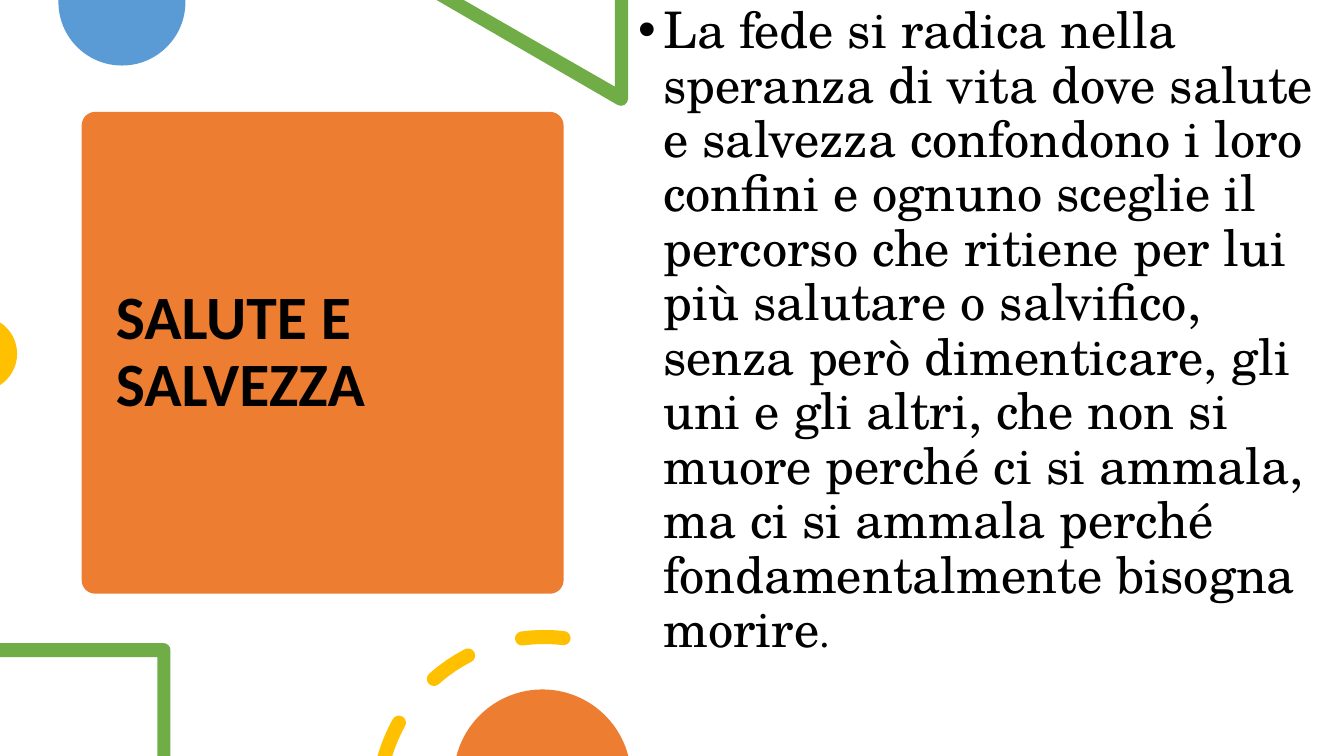
from math import ceil, cos, radians, sin, tan

from lxml.etree import SubElement
from pptx import Presentation
from pptx.dml.color import RGBColor
from pptx.enum.shapes import MSO_SHAPE as Preset
from pptx.enum.text import MSO_ANCHOR as Anchor, MSO_AUTO_SIZE as AutoSize, PP_ALIGN as Align
from pptx.oxml.ns import qn
from pptx.util import Inches, Pt

# Content: each run is text, size, font, bold
TITLE = [("SALUTE E SALVEZZA", 44, "Calibri", True)]
BODY = [
    ("La fede si radica nella speranza di vita dove salute e salvezza confondono "
     "i loro confini e ognuno sceglie il percorso che ritiene per lui più salutare "
     "o salvifico, senza però dimenticare, gli uni e gli altri, che non si muore "
     "perché ci si ammala, ma ci si ammala perché fondamentalmente bisogna morire",
     36, "TeX Gyre Schola", False),
    (".", 28, "TeX Gyre Schola", False),
]
WIDTH, HEIGHT = 13.33, 7.5
BLACK, BLUE, GREEN = "000000", "5B9BD5", "70AD47"
YELLOW, ORANGE = "FFC000", "ED7D31"

# Dashed ring: centre, radius, half thickness, start and end angle of each dash
RING_X, RING_Y, RING_RADIUS, RING_HALF = 5.4, 7.97, 1.65, 0.07
ROUND_DASHES = [(228.4, 242.7), (262.3, 276.6)]
CUT_DASH_OUTER, CUT_DASH_INNER, CUT_DASH_END = 195.9, 197.3, 209


# An outline is a list of nodes: a node holds its end point last,
# after two control points if it is reached by a curve.
def corners(*points):
    return [(point,) for point in points]


def arc(x, y, radius, start, end):
    """Nodes on a circle; angles in degrees, clockwise from the right."""
    count = ceil(abs(end - start) / 90) or 1
    step = radians(end - start) / count
    reach = radius * tan(step / 4) * 4 / 3
    nodes = corners((x + radius * cos(radians(start)), y + radius * sin(radians(start))))
    for number in range(count):
        first = radians(start) + number * step
        last = first + step
        left, top = nodes[-1][-1]
        right, bottom = x + radius * cos(last), y + radius * sin(last)
        nodes.append(((left - reach * sin(first), top + reach * cos(first)),
                      (right + reach * sin(last), bottom - reach * cos(last)),
                      (right, bottom)))
    return nodes


def ring_arc(offset, start, end):
    return arc(RING_X, RING_Y, RING_RADIUS + offset, start, end)


def dash_cap(angle, turn):
    x, y = ring_arc(0, angle, angle)[0][-1]
    return arc(x, y, RING_HALF, angle + turn, angle + turn + 180)[1:]


def dash(outer_start, inner_start, end):
    return (ring_arc(RING_HALF, outer_start, end) + dash_cap(end, 0)
            + ring_arc(-RING_HALF, end, inner_start)[1:])


def color(value):
    return RGBColor.from_string(value)


def paint(shape, value):
    shape.shadow.inherit = False
    shape.fill.solid()
    shape.fill.fore_color.rgb = color(value)
    shape.line.fill.background()


def draw_outline(page, value, *contours):
    def emu(point):
        return Inches(point[0]), Inches(point[1])

    builder = page.shapes.build_freeform(*emu(contours[0][0][-1]))
    for number, nodes in enumerate(contours):
        if number:
            builder.move_to(*emu(nodes[0][-1]))
        builder.add_line_segments([emu(node[-1]) for node in nodes[1:]], close=True)
    shape = builder.convert_to_shape()
    paint(shape, value)

    # Turn the segments that have control points into curves
    segments = list(shape._element.iter(qn("a:lnTo")))
    nodes = [node for contour in contours for node in contour[1:]]
    for segment, node in zip(segments, nodes):
        if len(node) == 3:
            curve = segment.getparent().makeelement(qn("a:cubicBezTo"))
            for x, y in map(emu, node):
                point = SubElement(curve, qn("a:pt"))
                point.set("x", str(x - shape.left))
                point.set("y", str(y - shape.top))
            segment.getparent().replace(segment, curve)


def fill_placeholder(box, place, runs, anchor):
    box.left, box.top, box.width, box.height = map(Inches, place)
    frame = box.text_frame
    frame.word_wrap = True
    frame.auto_size = AutoSize.NONE
    frame.vertical_anchor = anchor
    para = frame.paragraphs[0]
    para.alignment = Align.LEFT
    para.line_spacing = 0.9
    for text, size, font, bold in runs:
        span = para.add_run()
        span.text = text
        span.font.size, span.font.name, span.font.bold = Pt(size), font, bold
        span.font.color.rgb = color(BLACK)
    return para


def main():
    deck = Presentation()
    deck.slide_width, deck.slide_height = Inches(WIDTH), Inches(HEIGHT)
    page = deck.slides.add_slide(deck.slide_layouts[1])
    title, body = page.shapes.title, page.placeholders[1]

    # Title on its orange panel, which goes behind it
    panel = page.shapes.add_shape(Preset.ROUNDED_RECTANGLE, *map(Inches, (0.81, 1.11, 4.78, 4.78)))
    panel.adjustments[0] = 0.028
    paint(panel, ORANGE)
    title._element.addprevious(panel._element)
    fill_placeholder(title, (1.05, 1.22, 4.31, 4.56), TITLE, Anchor.MIDDLE)

    # Blue disc, green triangle tip and yellow disc, cut by the slide edges
    draw_outline(page, BLUE, corners((1.84, 0), (0.58, 0)) + arc(1.21, 0.02, 0.63, 180, 0))
    draw_outline(page, GREEN, corners((6.23, 0), (6.1, 0), (6.1, 0.86), (4.6, 0), (4.33, 0))
                 + arc(6.16, 0.98, 0.07, 120, 0))
    draw_outline(page, YELLOW, arc(-0.2, 3.51, 0.37, 57, -57))

    # Bulleted body, in front of the upper ornaments
    page.shapes._spTree.append(body._element)
    para = fill_placeholder(body, (6.23, 0, 7.1, HEIGHT), BODY, Anchor.TOP)
    para.space_before = Pt(10)
    props = para._p.get_or_add_pPr()
    props.set("marL", str(Inches(0.25)))
    props.set("indent", str(-Inches(0.25)))
    SubElement(props, qn("a:buFont")).set("typeface", "Arial")
    SubElement(props, qn("a:buChar")).set("char", "•")

    # Green frame corner
    draw_outline(page, GREEN, corners((0, 6.38), (0, 6.52), (1.56, 6.52), (1.56, HEIGHT), (1.69, HEIGHT))
                 + arc(1.62, 6.45, 0.07, 0, -90))

    # Dashed ring around the orange disc
    round_dashes = [dash(start, start, end) + dash_cap(start, 180) for start, end in ROUND_DASHES]
    draw_outline(page, YELLOW, dash(CUT_DASH_OUTER, CUT_DASH_INNER, CUT_DASH_END), *round_dashes)
    draw_outline(page, ORANGE, arc(5.38, 7.72, 0.88, 194.5, 345.5))

    deck.save("out.pptx")


if __name__ == "__main__":
    main()
